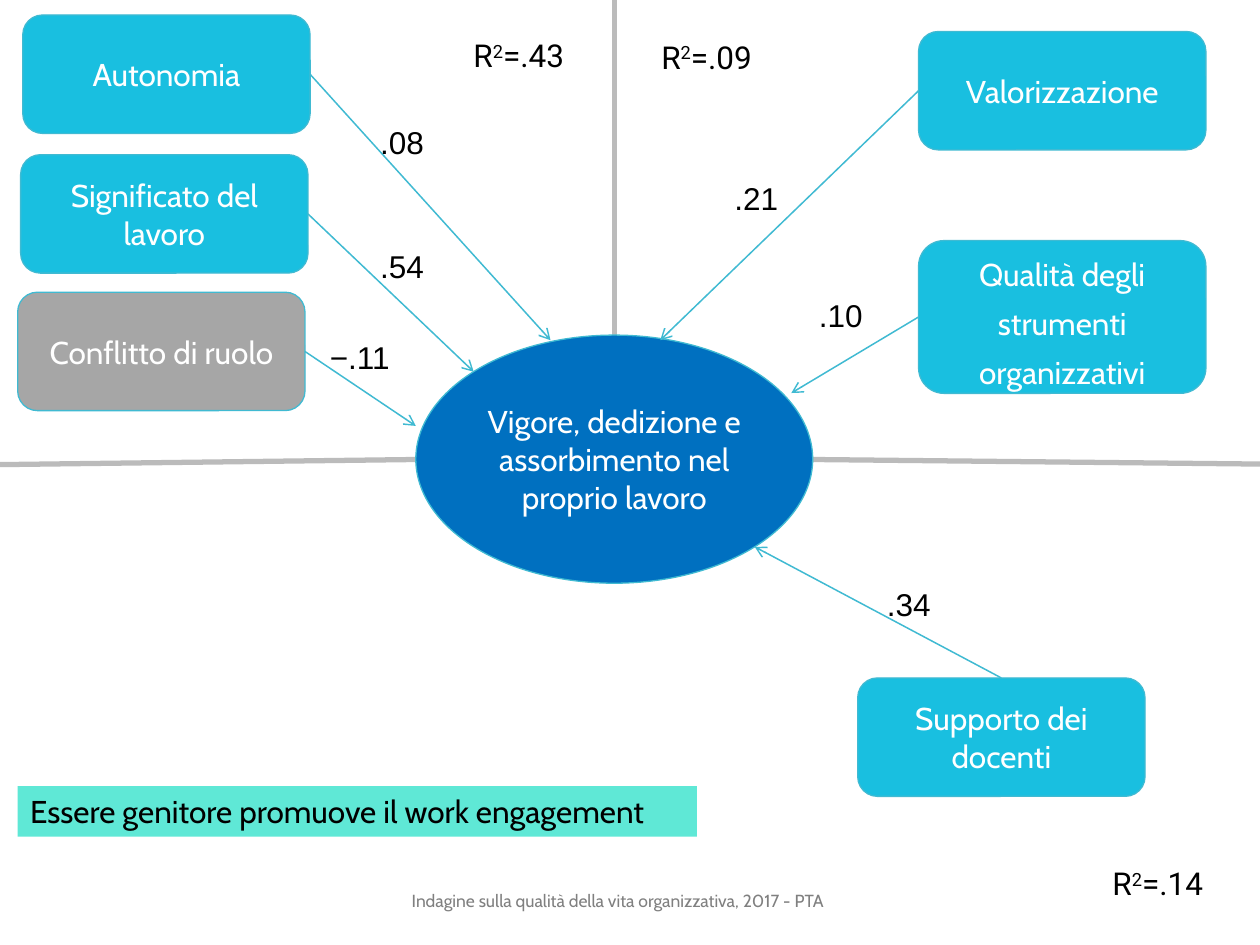
from lxml import etree
from pptx import Presentation
from pptx.dml.color import RGBColor
from pptx.enum.shapes import MSO_CONNECTOR, MSO_SHAPE
from pptx.enum.text import MSO_ANCHOR, MSO_AUTO_SIZE, PP_ALIGN
from pptx.oxml.ns import qn
from pptx.util import Pt

STRAIGHT = MSO_CONNECTOR.STRAIGHT
ELLIPSE, ROUNDED, RECTANGLE = MSO_SHAPE.OVAL, MSO_SHAPE.ROUNDED_RECTANGLE, MSO_SHAPE.RECTANGLE
LEFT, CENTER = PP_ALIGN.LEFT, PP_ALIGN.CENTER
TOP, MIDDLE = MSO_ANCHOR.TOP, MSO_ANCHOR.MIDDLE
FIT, NO_FIT = MSO_AUTO_SIZE.SHAPE_TO_FIT_TEXT, MSO_AUTO_SIZE.NONE

CYAN, GRAY, BLUE, MINT = "19BFE0", "A6A6A6", "0070C0", "5FE8D6"
OUTLINE, AXIS, WHITE, BLACK, FOOTER_GRAY = "40BAD2", "BBBBBB", "FFFFFF", "000000", "808080"

BOX_WIDTH, BOX_HEIGHT, TEXT_HEIGHT = 164.2, 67.7, 28.8
OUTCOME = ("Vigore, dedizione e assorbimento nel proprio lavoro", 237.6, 191.5, 226.8, 141.8)
FACTORS = [
    {"name": "Autonomia", "at": (13, 8.6), "side": "right", "tip": (314.6, 194.4),
     "weight": ".08", "weight_at": (210.2, 67)},
    {"name": "Significato del lavoro", "at": (11.8, 88.4), "side": "right", "tip": (270.7, 212.4),
     "weight": ".54", "weight_at": (210.2, 137.5)},
    {"name": "Conflitto di ruolo", "at": (10.1, 167), "side": "right", "tip": (237.6, 243.4),
     "weight": "−.11", "weight_at": (181.4, 189.4), "weight_width": 49, "fill": GRAY},
    {"name": "Valorizzazione", "at": (524.9, 18), "side": "left", "tip": (377.3, 194.4),
     "weight": ".21", "weight_at": (412.6, 98.6)},
    {"name": "Qualità degli strumenti organizzativi", "at": (524.9, 137.5), "side": "left",
     "tip": (452.2, 224.6), "weight": ".10", "weight_at": (460.8, 165.6),
     "height": 87.3, "spacing": 1.3},
    {"name": "Supporto dei docenti", "at": (490.1, 387.4), "side": "top", "tip": (431.3, 312.5),
     "weight": ".34", "weight_at": (499.7, 330.5)},
]
AXES = [
    ((351.2, 0), (351.2, 191.5)),
    ((720, 265.2), (464.4, 262.6)),
    ((237.6, 262.6), (0, 265.5)),
]
EXPLAINED = [("=.43", 263.5, 17.3), ("=.09", 370.8, 18), ("=.14", 628.6, 490.3)]
NOTE = ("Essere genitore promuove il work engagement", 10.1, 449.3, 388.1, TEXT_HEIGHT)
FOOTER = ("Indagine sulla qualità della vita organizzativa, 2017 - PTA", 228.2, 500.4, 349.2, TEXT_HEIGHT)


def color(value):
    return RGBColor.from_string(value)


def write(shape, text, font="Cabin", size=18, ink=WHITE, align=CENTER, anchor=MIDDLE,
          wrap=True, fit=NO_FIT, spacing=None):
    frame = shape.text_frame
    frame.word_wrap, frame.auto_size, frame.vertical_anchor = wrap, fit, anchor
    paragraph = frame.paragraphs[0]
    paragraph.alignment = align
    if spacing:
        paragraph.line_spacing = spacing
    for part in [text] if isinstance(text, str) else text:
        run = paragraph.add_run()
        run.text = part
        run.font.name, run.font.size = font, Pt(size)
        run.font.color.rgb = color(ink)
    return paragraph


def add_block(slide, kind, left, top, width, height, fill, outline=None):
    shape = slide.shapes.add_shape(kind, Pt(left), Pt(top), Pt(width), Pt(height))
    shape.shadow.inherit = False
    shape.fill.solid()
    shape.fill.fore_color.rgb = color(fill)
    if outline:
        shape.line.color.rgb = color(outline)
        shape.line.width = Pt(0.75)
    else:
        shape.line.fill.background()
    return shape


def add_text_box(slide, left, top, width, height=TEXT_HEIGHT):
    return slide.shapes.add_textbox(Pt(left), Pt(top), Pt(width), Pt(height))


def add_line(slide, start, end, ink, width, arrow=False):
    line = slide.shapes.add_connector(STRAIGHT, *(Pt(value) for value in (*start, *end)))
    line.line.color.rgb = color(ink)
    line.line.width = Pt(width)
    if arrow:
        etree.SubElement(line.line._get_or_add_ln(), qn("a:tailEnd"), type="arrow")
    etree.SubElement(line._element.spPr, qn("a:effectLst"))


def add_factor(slide, factor):
    left, top = factor["at"]
    height = factor.get("height", BOX_HEIGHT)
    box = add_block(slide, ROUNDED, left, top, BOX_WIDTH, height, factor.get("fill", CYAN), OUTLINE)
    write(box, factor["name"], spacing=factor.get("spacing"))
    start = {
        "right": (left + BOX_WIDTH, top + height / 2),
        "left": (left, top + height / 2),
        "top": (left + BOX_WIDTH / 2, top),
    }[factor["side"]]
    add_line(slide, start, factor["tip"], OUTLINE, 0.85, arrow=True)
    label = add_text_box(slide, *factor["weight_at"], factor.get("weight_width", 39.6))
    write(label, factor["weight"], font="Arial", ink=BLACK, align=LEFT, anchor=TOP, wrap=False, fit=FIT)


def main():
    presentation = Presentation()
    presentation.slide_width, presentation.slide_height = Pt(720), Pt(540)
    slide = presentation.slides.add_slide(presentation.slide_layouts[6])

    for start, end in AXES:
        add_line(slide, start, end, AXIS, 3)
    text, *place = OUTCOME
    write(add_block(slide, ELLIPSE, *place, BLUE, OUTLINE), text)
    for factor in FACTORS:
        add_factor(slide, factor)
    for value, left, top in EXPLAINED:
        paragraph = write(add_text_box(slide, left, top, 69.8), ["R", "2", value],
                          font="Roboto", ink=BLACK, align=LEFT, anchor=TOP, fit=FIT)
        paragraph.runs[1].font._element.set("baseline", "30000")
    text, *place = NOTE
    write(add_block(slide, RECTANGLE, *place, MINT), text, ink=BLACK, align=LEFT, anchor=TOP, fit=FIT)
    text, *place = FOOTER
    write(add_text_box(slide, *place), text, size=10, ink=FOOTER_GRAY, align=LEFT)

    presentation.save("out.pptx")


if __name__ == "__main__":
    main()
